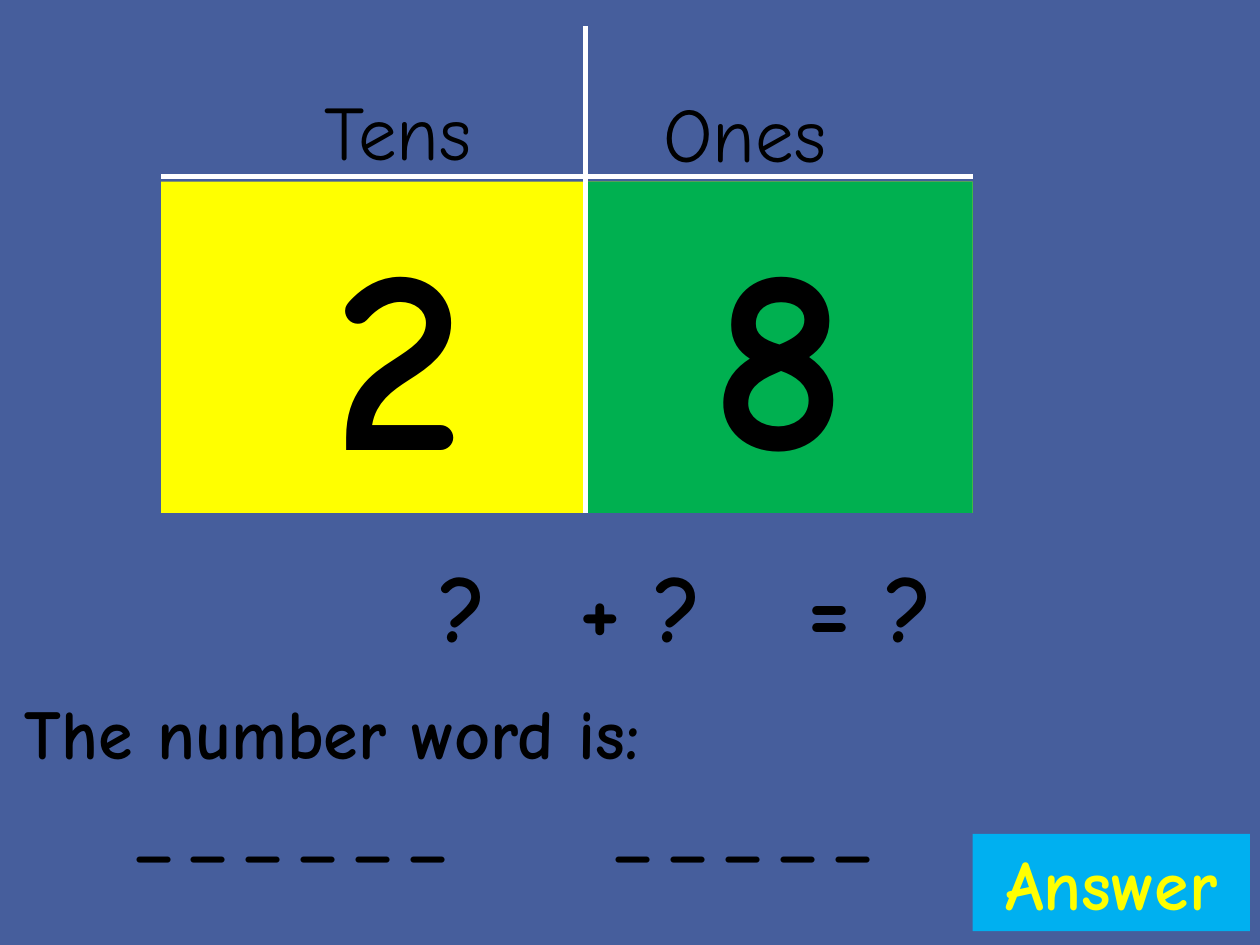
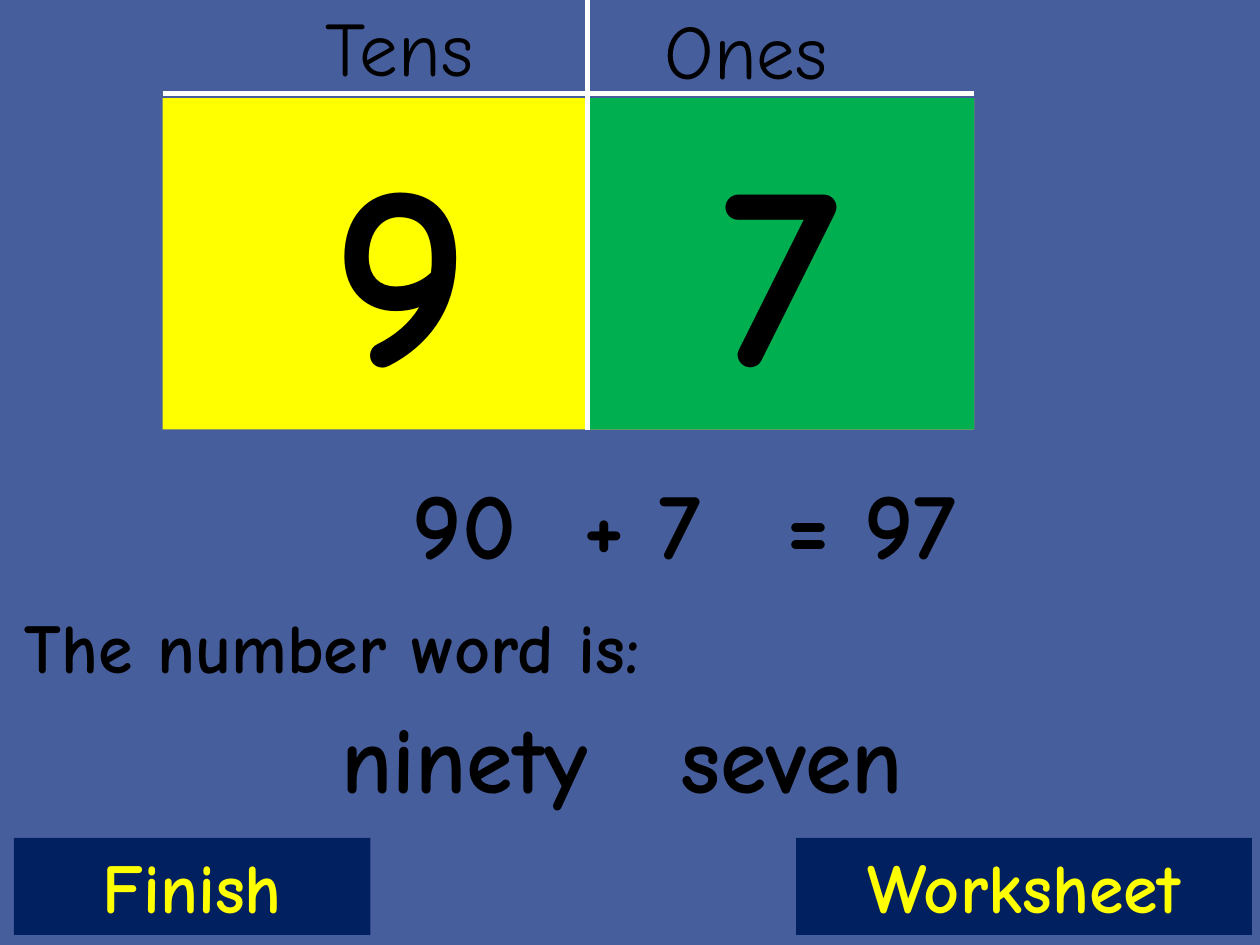
from lxml import etree
from pptx import Presentation
from pptx import util as u
from pptx.dml import color
from pptx.enum import shapes, text
from pptx.oxml import ns

FONT = "Comic Neue"
BACKDROP, INK, CHALK = "465E9C", "000000", "FFFFFF"
TENS, ONES = "FFFF00", "00B050"
SKY, NAVY, LABEL = "00B0F0", "002060", "FFFF00"

BOARD_LEFT, BOARD_TOP, BOARD_WIDTH, BOARD_HEIGHT = 3.25, 3.66, 16.36, 6.68
DIVIDER, RULE_TOP, DIVIDER_TOP = 11.81, 3.56, 0.53
TENS_INSET = 7.01
BUTTON_HEIGHT = 1.96

HEADING = {"size": u.Pt(44), "bold": False}
DIGIT = {"size": u.Pt(150), "bold": True}
LARGE = {"size": u.Pt(54), "bold": True}
MEDIUM = {"size": u.Pt(40), "bold": True}
SMALL = {"size": u.Pt(36), "bold": True}


def paint(target, hex_code):
    target.solid()
    target.fore_color.rgb = color.RGBColor.from_string(hex_code)


def write(holder, words, style, ink=INK, centred=True, middle=False):
    frame = holder.text_frame
    settings = {
        "word_wrap": True,
        "vertical_anchor": text.MSO_ANCHOR.MIDDLE if middle else text.MSO_ANCHOR.TOP,
        "auto_size": text.MSO_AUTO_SIZE.NONE if middle
        else text.MSO_AUTO_SIZE.SHAPE_TO_FIT_TEXT,
    }
    for name, value in settings.items():
        setattr(frame, name, value)
    paragraph = frame.paragraphs[0]
    paragraph.alignment = text.PP_ALIGN.CENTER if centred else text.PP_ALIGN.LEFT
    run = paragraph.add_run()
    run.text = words
    for name, value in {"name": FONT, **style}.items():
        setattr(run.font, name, value)
    paint(run.font.fill, ink)


def add_words(slide, box, words, style, **layout):
    label = slide.shapes.add_textbox(*map(u.Cm, box))
    write(label, words, style, **layout)


def add_block(slide, box, fill, words, style, ink=INK):
    block = slide.shapes.add_shape(shapes.MSO_SHAPE.RECTANGLE, *map(u.Cm, box))
    block.shadow.inherit = False
    paint(block.fill, fill)
    block.line.fill.background()
    write(block, words, style, ink)
    return block


def add_rule(slide, *ends):
    rule = slide.shapes.add_connector(shapes.MSO_CONNECTOR.STRAIGHT, *map(u.Cm, ends))
    paint(rule.line.fill, CHALK)
    rule.line.width = u.Pt(3)
    etree.SubElement(rule._element.spPr, ns.qn("a:effectLst"))


def add_place_value_board(slide, tens, ones, dx, dy):
    for heading, left, top in (("Tens", 5.51, 1.02), ("Ones", 12.5, 1.07)):
        add_words(slide, (left + dx, top + dy, 5.03, 3.18), heading, HEADING, middle=True)
    left, top, divider = BOARD_LEFT + dx, BOARD_TOP + dy, DIVIDER + dx
    right = left + BOARD_WIDTH
    add_rule(slide, right, RULE_TOP + dy, left, RULE_TOP + dy)
    tens_card = add_block(slide, (left, top, BOARD_WIDTH, BOARD_HEIGHT), TENS, tens, DIGIT)
    tens_card.text_frame.margin_right = u.Cm(TENS_INSET)
    add_block(slide, (divider, top, right - divider, BOARD_HEIGHT), ONES, ones, DIGIT)
    add_rule(slide, divider, max(0, DIVIDER_TOP + dy), divider, top + BOARD_HEIGHT)


def add_sum(slide, terms, dx, dy):
    for term, left, width in zip(terms, (7.24, 10.82, 14.43), (4.19, 4.19, 6.22)):
        add_words(slide, (left + dx, 10.92 + dy, width, 2.57), term, LARGE)


def add_number_words(slide, prompt_top, words, lefts, top, height, style):
    add_words(slide, (0.25, prompt_top, 14.76, 1.96), "The number word is:", MEDIUM,
              centred=False)
    for word, left in zip(words, lefts):
        add_words(slide, (left, top, 10.44, height), word, style)


def add_button(slide, caption, left, top, width, fill):
    add_block(slide, (left, top, width, BUTTON_HEIGHT), fill, caption, MEDIUM, LABEL)


def add_page(deck, digits, terms, dx=0, dy=0):
    slide = deck.slides.add_slide(deck.slide_layouts[6])
    paint(slide.background.fill, BACKDROP)
    add_place_value_board(slide, *digits, dx, dy)
    add_sum(slide, terms, dx, dy)
    return slide


def main():
    deck = Presentation()
    deck.slide_width, deck.slide_height = u.Cm(25.4), u.Cm(19.05)

    question = add_page(deck, "28", ("?", "+ ?", "= ?"))
    add_number_words(question, 13.77, ("_ _ _ _ _ _", "_ _ _ _ _"), (0.66, 9.78),
                     15.93, 1.8, SMALL)
    add_button(question, "Answer", 19.61, 16.81, 5.59, SKY)

    answer = add_page(deck, "97", ("90", "+ 7", "= 97"), dx=0.03, dy=-1.68)
    add_number_words(answer, 12.04, ("ninety", "seven"), (4.14, 10.74),
                     13.97, 2.57, LARGE)
    add_button(answer, "Finish", 0.28, 16.89, 7.19, NAVY)
    add_button(answer, "Worksheet", 16.05, 16.89, 9.19, NAVY)

    deck.save("out.pptx")


if __name__ == "__main__":
    main()
